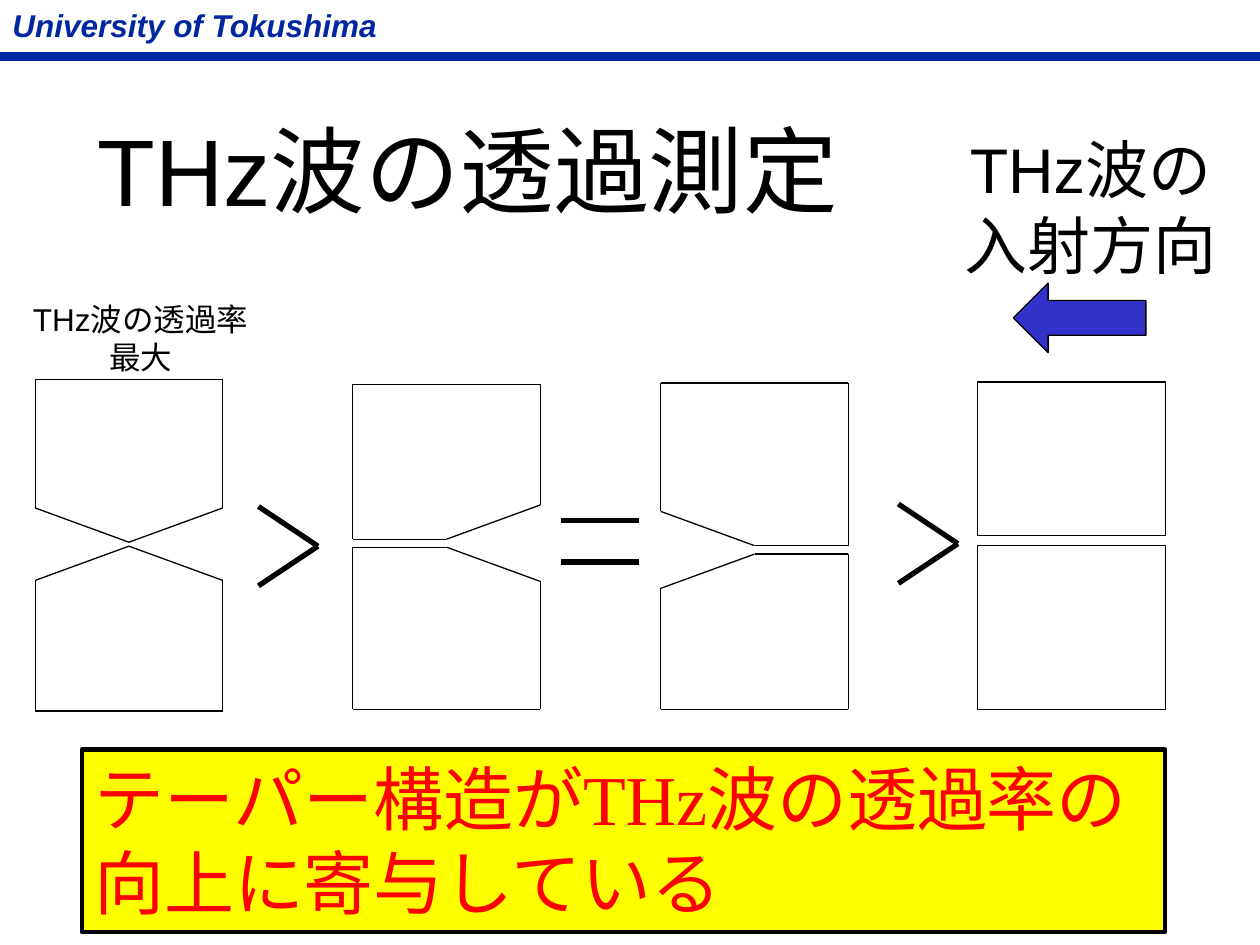
from pptx import Presentation
from pptx.dml.color import RGBColor
from pptx.enum.shapes import MSO_CONNECTOR, MSO_SHAPE
from pptx.enum.text import MSO_ANCHOR, MSO_AUTO_SIZE, PP_ALIGN
from pptx.oxml.ns import qn
from pptx.util import Cm, Pt

STRAIGHT = MSO_CONNECTOR.STRAIGHT
RECTANGLE, LEFT_ARROW = MSO_SHAPE.RECTANGLE, MSO_SHAPE.LEFT_ARROW
TOP = MSO_ANCHOR.TOP
FIT_NONE = MSO_AUTO_SIZE.NONE
LEFT, CENTER = PP_ALIGN.LEFT, PP_ALIGN.CENTER

BLACK, NAVY, BLUE = "000000", "00279F", "3333CC"
YELLOW, RED = "FFFF00", "FF0000"
TAPER_DROP = 0.69


def color(value):
    return RGBColor.from_string(value)


def write(shape, lines, size, ink=BLACK, font="Arial", align=CENTER, wrap=True):
    frame = shape.text_frame
    frame.text = "\n".join(lines)
    frame.auto_size = FIT_NONE
    frame.word_wrap = wrap
    frame.vertical_anchor = TOP
    for para in frame.paragraphs:
        para.alignment = align
        para.font.name = font
        para.font.size = Pt(size)
        para.font.color.rgb = color(ink)
    return frame


def add_label(page, box, lines, size, **style):
    label = page.shapes.add_textbox(*map(Cm, box))
    return write(label, lines, size, **style)


def add_block(shapes, kind, box, fill=None, line=BLACK, weight=0.75):
    block = shapes.add_shape(kind, *map(Cm, box))
    block.shadow.inherit = False
    if fill:
        block.fill.solid()
        block.fill.fore_color.rgb = color(fill)
    else:
        block.fill.background()
    block.line.color.rgb = color(line)
    block.line.width = Pt(weight)
    return block


def add_path(shapes, origin, points, weight):
    left, top = origin
    for (x1, y1), (x2, y2) in zip(points, points[1:]):
        edge = shapes.add_connector(
            STRAIGHT, Cm(left + x1), Cm(top + y1), Cm(left + x2), Cm(top + y2))
        edge.line.color.rgb = color(BLACK)
        edge.line.width = Pt(weight)
        properties = edge._element.spPr
        properties.append(properties.makeelement(qn("a:effectLst"), {}))


def add_header(page, width):
    add_block(page.shapes, RECTANGLE, (0, 1.07, width, 0.15), NAVY, NAVY, 1)
    frame = add_label(page, (0, 0, 7.92, 1.02), ["University of Tokushima"], 18,
                      ink=NAVY, align=LEFT, wrap=False)
    frame.paragraphs[0].font.bold = True
    frame.paragraphs[0].font.italic = True


def add_title(page, box):
    title = page.shapes.title
    title.left, title.top, title.width, title.height = map(Cm, box)
    write(title, ["THz波の透過測定"], 54)


def add_tapered_plates(page, box, neck, gap, left_taper, right_taper):
    left, top, width, height = box
    left_drop, right_drop = TAPER_DROP * left_taper, TAPER_DROP * right_taper
    lower = neck + gap
    group = page.shapes.add_group_shape()
    upper_plate = [(0, 0), (width, 0), (width, neck - right_drop),
                   (width / 2, neck), (0, neck - left_drop), (0, 0)]
    lower_plate = [(0, height), (width, height), (width, lower + right_drop),
                   (width / 2, lower), (0, lower + left_drop), (0, height)]
    for plate in (upper_plate, lower_plate):
        add_path(group.shapes, (left, top), plate, 0.75)


def add_flat_plates(page, box, neck, gap):
    left, top, width, height = box
    lower = neck + gap
    group = page.shapes.add_group_shape()
    add_block(group.shapes, RECTANGLE, (left, top, width, neck))
    add_block(group.shapes, RECTANGLE, (left, top + lower, width, height - lower))


def add_greater_sign(page, box):
    left, top, width, height = box
    group = page.shapes.add_group_shape()
    add_path(group.shapes, (left, top), [(0, 0), (width, height / 2), (0, height)], 3)


def add_equals_sign(page, box):
    left, top, width, height = box
    group = page.shapes.add_group_shape()
    for y in (0, height):
        add_path(group.shapes, (left, top), [(0, y), (width, y)], 3)


def add_comparison(page):
    add_flat_plates(page, (19.71, 7.7, 3.78, 6.6), 3.1, 0.2)
    add_tapered_plates(page, (0.71, 7.65, 3.78, 6.68), 3.28, 0.08, True, True)
    add_tapered_plates(page, (7.11, 7.75, 3.78, 6.55), 3.12, 0.16, False, True)
    add_tapered_plates(page, (13.32, 7.72, 3.78, 6.58), 3.28, 0.17, True, False)
    add_greater_sign(page, (5.21, 10.21, 1.2, 1.6))
    add_equals_sign(page, (11.3, 10.49, 1.58, 0.84))
    add_greater_sign(page, (18.11, 10.16, 1.2, 1.6))
    add_label(page, (-0.81, 5.92, 7.29, 1.8), ["THz波の透過率", "最大"], 18)


def add_incidence(page, left, top):
    add_block(page.shapes, LEFT_ARROW, (left + 1.53, top + 3.2, 2.67, 1.4), BLUE)
    add_label(page, (left, top, 6.17, 3.33), ["THz波の入射方向"], 36)


def add_conclusion(page, box):
    banner = add_block(page.shapes, RECTANGLE, box, YELLOW, weight=2.5)
    write(banner, ["テーパー構造がTHz波の透過率の向上に寄与している"], 40,
          ink=RED, font="Times New Roman", align=LEFT)


def main():
    deck = Presentation()
    deck.slide_width, deck.slide_height = Cm(25.4), Cm(19.05)
    page = deck.slides.add_slide(deck.slide_layouts[5])
    add_header(page, 25.4)
    add_title(page, (1.22, 2.13, 16.41, 2.57))
    add_comparison(page)
    add_incidence(page, 18.9, 2.51)
    add_conclusion(page, (1.65, 15.11, 21.84, 3.68))
    deck.save("out.pptx")


if __name__ == "__main__":
    main()
